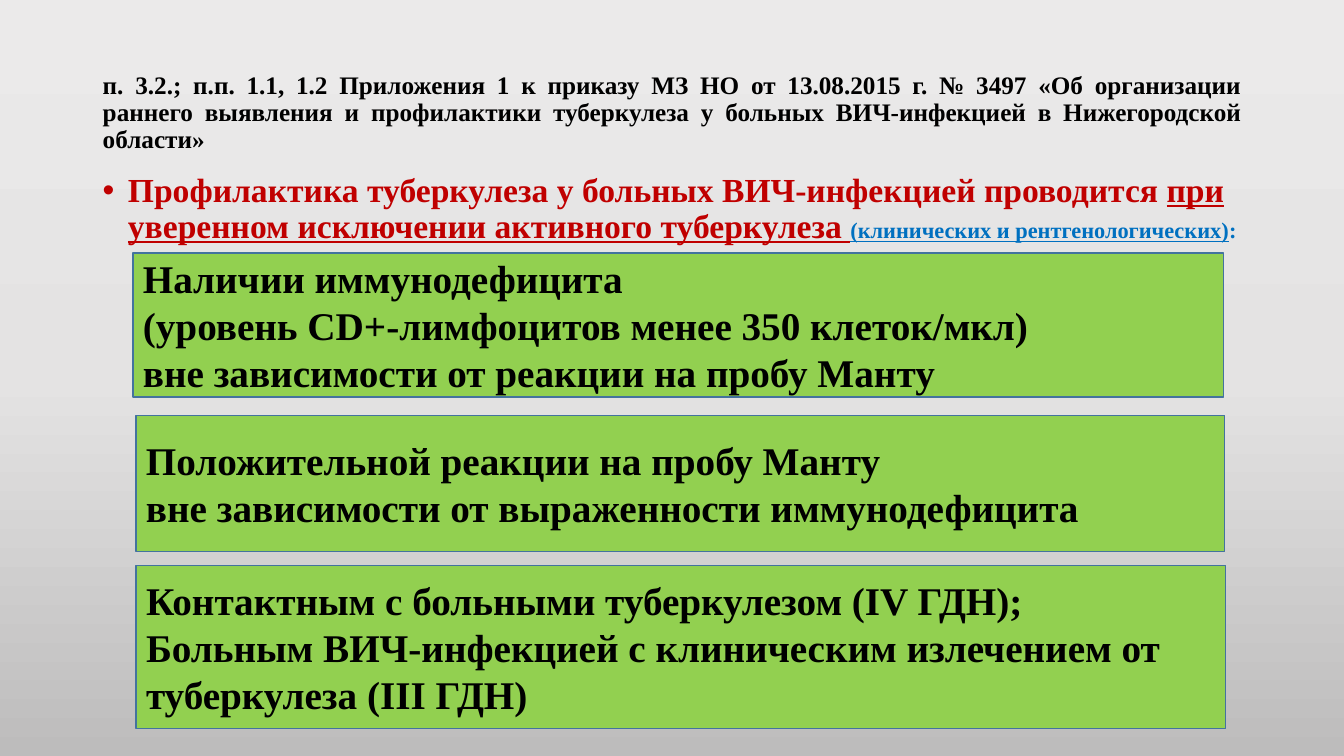
from copy import deepcopy

from pptx import Presentation
from pptx.dml.color import RGBColor
from pptx.enum.shapes import MSO_SHAPE
from pptx.enum.text import MSO_ANCHOR, MSO_AUTO_SIZE, PP_ALIGN
from pptx.util import Pt

RECT = MSO_SHAPE.RECTANGLE
MIDDLE, TOP = MSO_ANCHOR.MIDDLE, MSO_ANCHOR.TOP
LEFT, JUSTIFY = PP_ALIGN.LEFT, PP_ALIGN.JUSTIFY
NO_FIT = MSO_AUTO_SIZE.NONE
FONT = "Times New Roman"
COLORS = {"black": "000000", "red": "C00000", "blue": "0070C0",
          "green": "92D050", "edge": "43739E"}
SHADES = [(0, "EBEAEA"), (0.5, "E4E3E3"), (1, "BDBCBC")]


def style(run, size, color, under=False):
    font = run.font
    font.name, font.size, font.bold = FONT, Pt(size), True
    font.underline = under
    font.color.rgb = RGBColor.from_string(COLORS[color])


def place(shape, left, top, width, height, anchor):
    shape.left, shape.top = Pt(left), Pt(top)
    shape.width, shape.height = Pt(width), Pt(height)
    frame = shape.text_frame
    frame.word_wrap, frame.auto_size = True, NO_FIT
    frame.vertical_anchor = anchor
    return frame


deck = Presentation()
deck.slide_width, deck.slide_height = Pt(960), Pt(540)
slide = deck.slides.add_slide(deck.slide_layouts[1])

# Background gradient, light at the top
fill = slide.background.fill
fill.gradient()
fill.gradient_angle = 270
last = fill._fill._gradFill.gsLst[-1]
last.addnext(deepcopy(last))
for stop, (pos, shade) in zip(fill.gradient_stops, SHADES):
    stop.position = pos
    stop.color.rgb = RGBColor.from_string(shade)

# Title
frame = place(slide.shapes.title, 66.2, 28.8, 828, 104.4, MIDDLE)
frame.text = ("п. 3.2.; п.п. 1.1, 1.2 Приложения 1 к приказу МЗ НО от 13.08.2015 г. "
              "№ 3497 «Об организации раннего выявления и профилактики туберкулеза "
              "у больных ВИЧ-инфекцией в Нижегородской области»")
para = frame.paragraphs[0]
para.alignment, para.line_spacing = JUSTIFY, 0.9
style(para.runs[0], 18, "black")

# Lead bullet
frame = place(slide.placeholders[1], 66.2, 120.2, 828, 409.7, TOP)
para = frame.paragraphs[0]
para.line_spacing, para.space_before = 0.9, Pt(10)
props = para._p.get_or_add_pPr()
props.set("marL", str(Pt(18)))
props.set("indent", str(Pt(-18)))
for text, size, color, under in [
    ("Профилактика туберкулеза у больных ВИЧ-инфекцией проводится ", 24, "red", False),
    ("при уверенном исключении активного туберкулеза ", 24, "red", True),
    ("(клинических и рентгенологических)", 16, "blue", True),
    (":", 16, "blue", False),
]:
    run = para.add_run()
    run.text = text
    style(run, size, color, under)

# Green boxes with the conditions
BOXES = [
    (95, 180.7, 779, 103, LEFT,
     ["Наличии иммунодефицита",
      "(уровень CD+-лимфоцитов менее 350 клеток/мкл)",
      "вне зависимости от реакции на пробу Манту"]),
    (97.2, 296.6, 777.6, 97.2, JUSTIFY,
     ["Положительной реакции на пробу Манту ",
      "вне зависимости от выраженности иммунодефицита"]),
    (97.2, 403.9, 778.3, 116.6, LEFT,
     ["Контактным с больными туберкулезом (IV ГДН);",
      "Больным ВИЧ-инфекцией с клиническим излечением от туберкулеза (III ГДН)"]),
]
for left, top, width, height, align, lines in BOXES:
    box = slide.shapes.add_shape(RECT, 0, 0, 0, 0)
    frame = place(box, left, top, width, height, MIDDLE)
    box.shadow.inherit = False
    box.fill.solid()
    box.fill.fore_color.rgb = RGBColor.from_string(COLORS["green"])
    box.line.color.rgb = RGBColor.from_string(COLORS["edge"])
    box.line.width = Pt(1)
    frame.text = "\n".join(lines)
    for para in frame.paragraphs:
        para.alignment = align
        style(para.runs[0], 28, "black")

deck.save("out.pptx")
